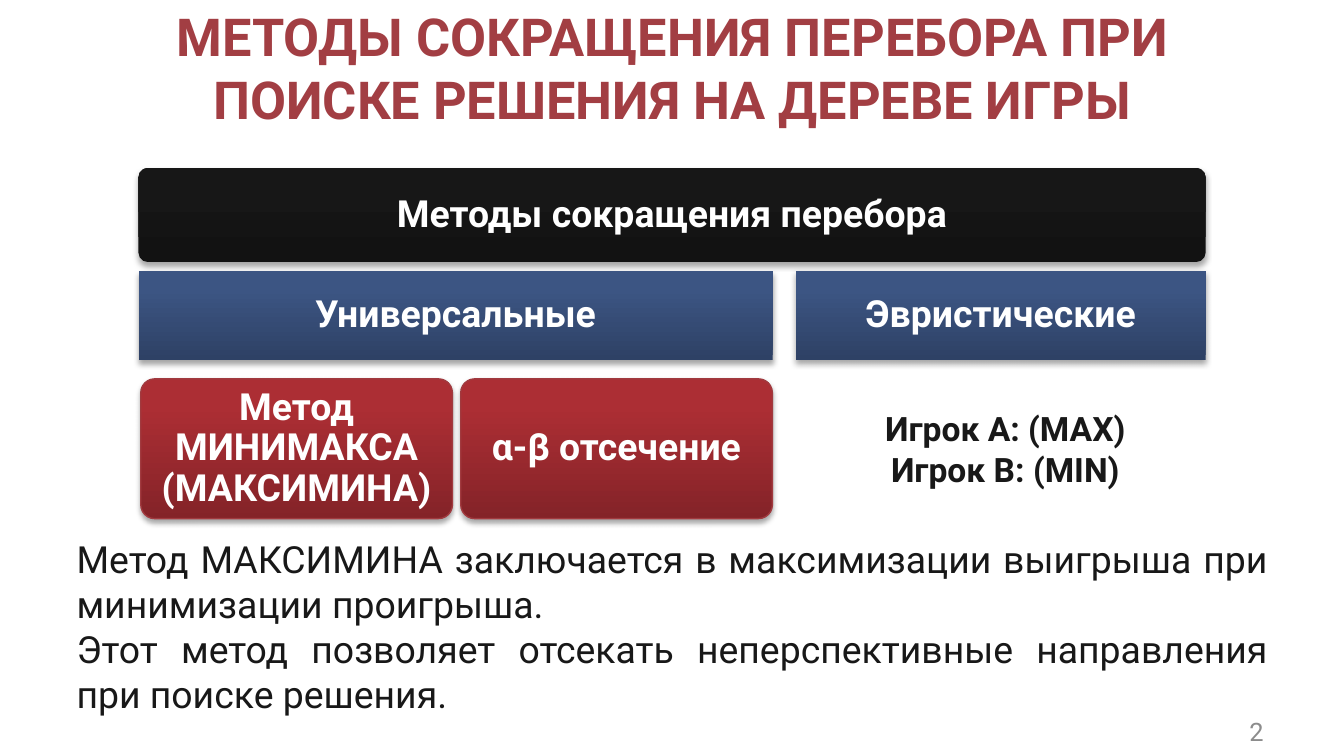
from lxml.etree import SubElement
from pptx import Presentation
from pptx.dml.color import RGBColor
from pptx.enum.shapes import MSO_SHAPE
from pptx.enum.text import MSO_ANCHOR, MSO_AUTO_SIZE, PP_ALIGN
from pptx.oxml.ns import qn
from pptx.util import Pt

FONT = "Roboto"
WHITE = RGBColor(0xFF, 0xFF, 0xFF)
BLACK = RGBColor(0, 0, 0)
INK = RGBColor(0x18, 0x18, 0x18)
GREY = RGBColor(0x8C, 0x8C, 0x8C)
ROSE = RGBColor(0xA2, 0x3E, 0x43)
EDGE = RGBColor(0xA1, 0x3A, 0x3F)
DARK = (RGBColor(0x12, 0x12, 0x12), RGBColor(0x17, 0x17, 0x17))
BLUE = (RGBColor(0x2E, 0x41, 0x65), RGBColor(0x3C, 0x55, 0x83))
RED = (RGBColor(0x84, 0x23, 0x28), RGBColor(0xAC, 0x2E, 0x34))


def place(shape, box):
    shape.left, shape.top, shape.width, shape.height = map(Pt, box)


def write(shape, *lines, size=20, color=INK, bold=False, align=PP_ALIGN.CENTER,
          anchor=MSO_ANCHOR.TOP, space=1.0, inset=None):
    frame = shape.text_frame
    frame.word_wrap = True
    frame.auto_size = MSO_AUTO_SIZE.NONE
    frame.vertical_anchor = anchor
    if inset is not None:
        frame.margin_left = frame.margin_right = Pt(inset)
        frame.margin_top = frame.margin_bottom = Pt(inset)
    for i, line in enumerate(lines):
        para = frame.add_paragraph() if i else frame.paragraphs[0]
        para.alignment = align
        para.line_spacing = space
        para.space_before = para.space_after = Pt(0)
        run = para.add_run()
        run.text = line
        run.font.name = FONT
        run.font.size = Pt(size)
        run.font.bold = bold
        run.font.color.rgb = color


def shade(shape):
    shape.shadow.inherit = False
    effects = shape._element.spPr.find(qn("a:effectLst"))
    outer = SubElement(effects, qn("a:outerShdw"), blurRad=str(Pt(3.1)),
                       dist=str(Pt(1.8)), dir="5400000", rotWithShape="0")
    color = SubElement(outer, qn("a:srgbClr"), val=str(BLACK))
    SubElement(color, qn("a:alpha"), val="35000")


def block(slide, box, label, tones, kind=MSO_SHAPE.RECTANGLE, edge=None):
    shape = slide.shapes.add_shape(kind, *map(Pt, box))
    if kind == MSO_SHAPE.ROUNDED_RECTANGLE:
        shape.adjustments[0] = 0.1
    shape.fill.gradient()
    shape.fill.gradient_angle = 90
    for stop, tone, pos in zip(shape.fill.gradient_stops, tones, (0, 0.8)):
        stop.color.rgb = tone
        stop.position = pos
    if edge:
        shape.line.color.rgb = edge
        shape.line.width = Pt(0.75)
    else:
        shape.line.fill.background()
    shade(shape)
    write(shape, label, color=WHITE, bold=True, space=0.9, inset=2.9,
          anchor=MSO_ANCHOR.MIDDLE)


def label(slide, box, *lines, **style):
    write(slide.shapes.add_textbox(*map(Pt, box)), *lines, **style)


def heading(slide, box):
    title = slide.shapes.title
    place(title, box)
    write(title, "МЕТОДЫ СОКРАЩЕНИЯ ПЕРЕБОРА ПРИ ПОИСКЕ РЕШЕНИЯ НА ДЕРЕВЕ ИГРЫ",
          size=28, color=ROSE, bold=True, anchor=MSO_ANCHOR.MIDDLE)


def tree(slide, box):
    left, top, width, height = box
    wide, small, card = 339.8, 219.6, 167
    right = left + width
    row = top + 55.4
    base = top + 113
    tall = height - 113
    rounded = MSO_SHAPE.ROUNDED_RECTANGLE
    block(slide, (left, top, width, 50.4), "Методы сокращения перебора",
          DARK, rounded)
    block(slide, (left, row, wide, 47.5), "Универсальные", BLUE)
    block(slide, (right - small, row, small, 47.5), "Эвристические", BLUE)
    cards = ("Метод МИНИМАКСА (МАКСИМИНА)", "α-β отсечение")
    for i, name in enumerate(cards):
        block(slide, (left + 1.2 + i * (card + 4.4), base, card, tall), name,
              RED, rounded, EDGE)
    label(slide, (right - small - 10.8, base + 12.2, 246.2, 51.1),
          "Игрок А: (MAX)", "Игрок В: (MIN)", size=18, bold=True)


def notes(slide, box):
    body = slide.placeholders[1]
    place(body, box)
    write(body,
          "Метод МАКСИМИНА заключается в максимизации выигрыша при минимизации проигрыша.",
          "Этот метод позволяет отсекать неперспективные направления при поиске решения.",
          align=PP_ALIGN.JUSTIFY)
    for para in body.text_frame.paragraphs:
        props = para._p.get_or_add_pPr()
        props.set("marL", "0")
        props.set("indent", "0")
        SubElement(props, qn("a:buNone"))


def main():
    deck = Presentation()
    deck.slide_width, deck.slide_height = Pt(720), Pt(405)
    slide = deck.slides.add_slide(deck.slide_layouts[1])
    heading(slide, (36, 10.8, 648, 50.4))
    tree(slide, (74.2, 90, 571.7, 187.9))
    notes(slide, (33.8, 283.7, 653, 104.4))
    label(slide, (643.7, 380.9, 40.3, 21.6), "2", size=13.6, color=GREY,
          align=PP_ALIGN.RIGHT, anchor=MSO_ANCHOR.MIDDLE)
    deck.save("out.pptx")


if __name__ == "__main__":
    main()
